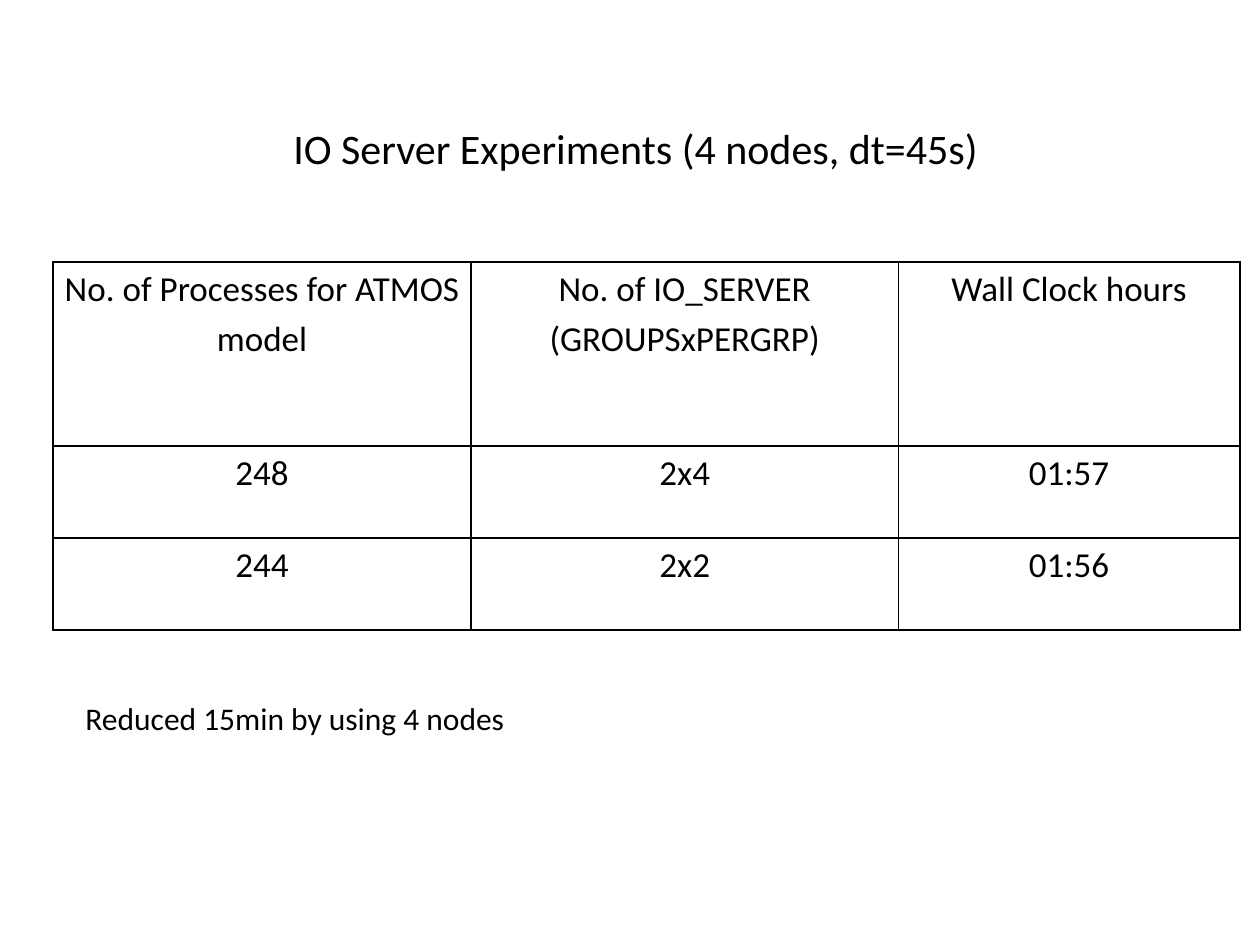
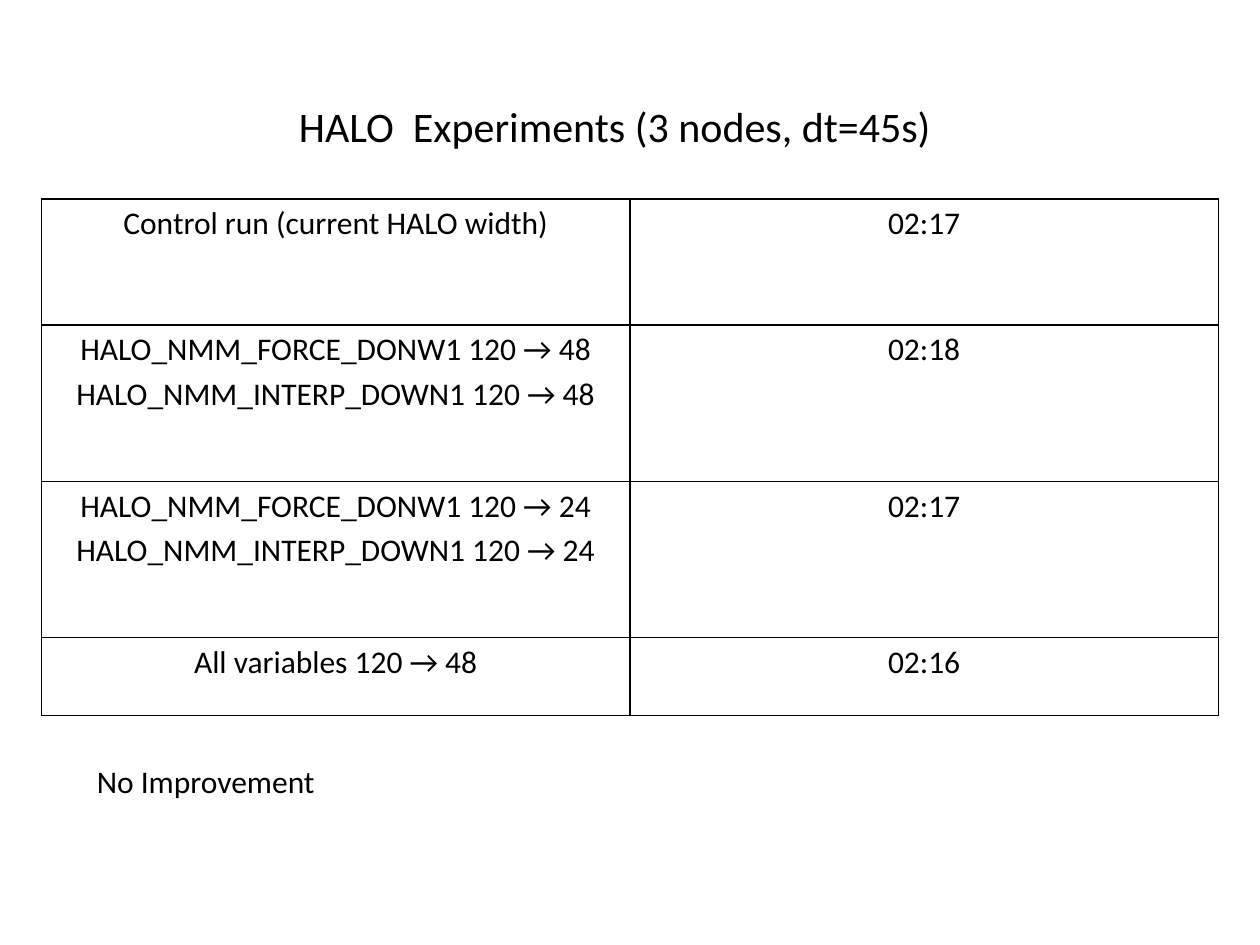
from lxml.etree import SubElement
from pptx import Presentation
from pptx.dml.color import RGBColor
from pptx.enum.text import MSO_AUTO_SIZE as AutoSize, PP_ALIGN as Align
from pptx.oxml.ns import qn
from pptx.util import Inches, Pt

BLACK = RGBColor(0x00, 0x00, 0x00)
WHITE = RGBColor(0xFF, 0xFF, 0xFF)
FONT = "Calibri"
TITLE_SIZE = 24
NOTE_SIZE = 18
BORDER_WIDTH = Pt(1)

EXPERIMENTS = [
    {
        "title": "IO Server Experiments (4 nodes, dt=45s)",
        "title_at": (0.67, 0.92, 8.75, 0.5),
        "table_at": (0.42, 2.08),
        "columns": [3.32, 3.39, 2.71],
        "rows": [1.46, 0.73, 0.73],
        "size": 20,
        "cells": [
            ["No. of Processes for ATMOS model", "No. of IO_SERVER (GROUPSxPERGRP)", "Wall Clock hours"],
            ["248", "2x4", "01:57"],
            ["244", "2x2", "01:56"],
        ],
        "note": "Reduced 15min by using 4 nodes",
        "note_at": (0.58, 5.5, 8.58, 0.4),
    },
    {
        "title": "HALO  Experiments (3 nodes, dt=45s)",
        "title_at": (0.67, 0.75, 8.42, 0.5),
        "table_at": (0.33, 1.58),
        "columns": [4.67, 4.67],
        "rows": [1, 1.24, 1.24, 0.62],
        "size": 18,
        "cells": [
            ["Control run (current HALO width)", "02:17"],
            ["HALO_NMM_FORCE_DONW1 120 → 48\nHALO_NMM_INTERP_DOWN1 120 → 48", "02:18"],
            ["HALO_NMM_FORCE_DONW1 120 → 24\nHALO_NMM_INTERP_DOWN1 120 → 24", "02:17"],
            ["All variables 120 → 48", "02:16"],
        ],
        "note": "No Improvement",
        "note_at": (0.67, 6, 7.42, 0.4),
    },
]


def write_text(frame, text, size, align=Align.LEFT, line_spacing=None):
    """Fill a text frame, one paragraph for each line of text."""
    frame.word_wrap = True
    frame.text = text
    for para in frame.paragraphs:
        para.alignment = align
        para.line_spacing = line_spacing
        for span in para.runs:
            span.font.name = FONT
            span.font.size = Pt(size)
            span.font.color.rgb = BLACK


def add_borders(cell):
    properties = cell._tc.get_or_add_tcPr()
    for side in ("a:lnL", "a:lnR", "a:lnT", "a:lnB"):
        line = SubElement(properties, qn(side), w=str(BORDER_WIDTH))
        fill = SubElement(line, qn("a:solidFill"))
        SubElement(fill, qn("a:srgbClr"), val=str(BLACK))


deck = Presentation()
deck.slide_width = Inches(10)
deck.slide_height = Inches(7.5)

for experiment in EXPERIMENTS:
    page = deck.slides.add_slide(deck.slide_layouts[6])

    columns, rows = experiment["columns"], experiment["rows"]
    left, top = experiment["table_at"]
    table = page.shapes.add_table(
        len(rows), len(columns),
        Inches(left), Inches(top), Inches(sum(columns)), Inches(sum(rows)),
    ).table
    table.first_row = False
    table.horz_banding = False
    for column, width in zip(table.columns, columns):
        column.width = Inches(width)
    for row, height, texts in zip(table.rows, rows, experiment["cells"]):
        row.height = Inches(height)
        for cell, text in zip(row.cells, texts):
            cell.margin_left = cell.margin_right = Inches(0.07)
            cell.margin_top = cell.margin_bottom = 0
            add_borders(cell)
            cell.fill.solid()
            cell.fill.fore_color.rgb = WHITE
            write_text(cell.text_frame, text, experiment["size"], align=Align.CENTER, line_spacing=1.15)

    for part, size, align in (("title", TITLE_SIZE, Align.CENTER), ("note", NOTE_SIZE, Align.LEFT)):
        box = page.shapes.add_textbox(*map(Inches, experiment[part + "_at"]))
        write_text(box.text_frame, experiment[part], size, align=align)
        box.text_frame.auto_size = AutoSize.SHAPE_TO_FIT_TEXT

deck.save("out.pptx")
